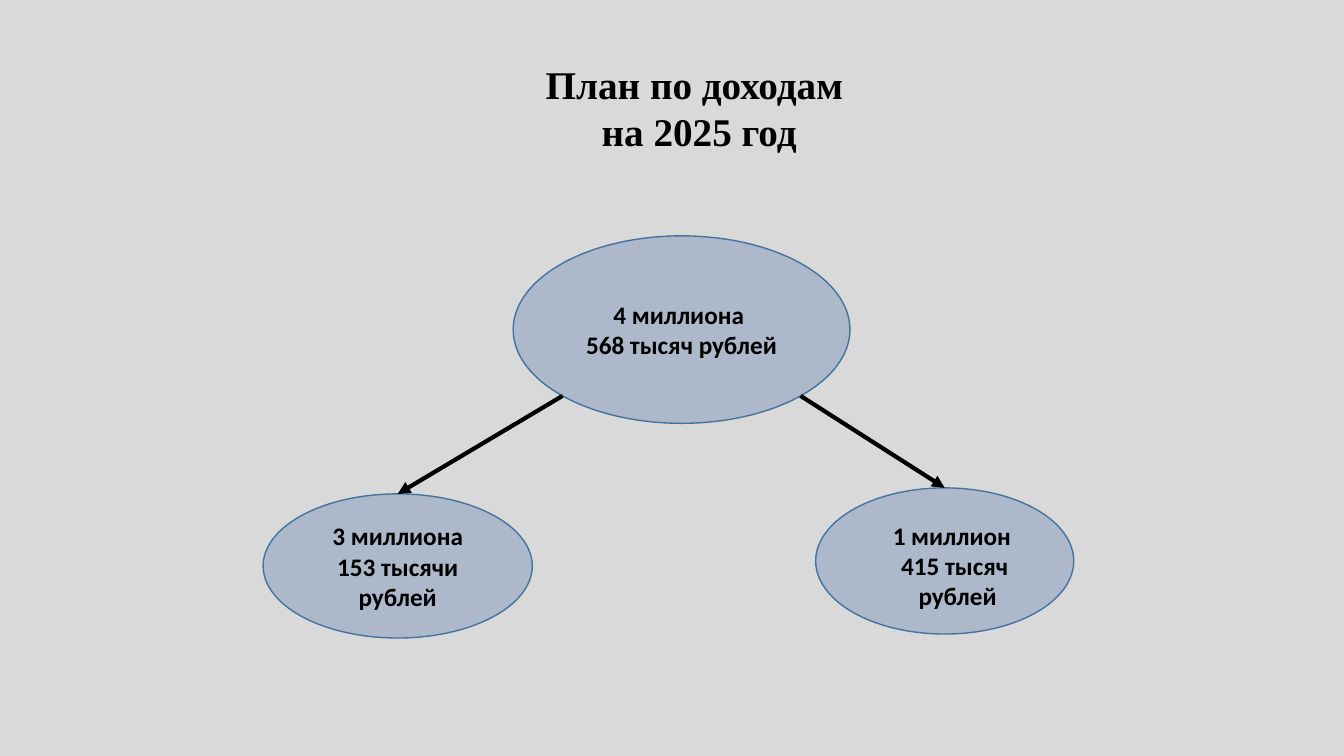
from dataclasses import dataclass
from math import sqrt

from pptx import Presentation
from pptx.dml.color import RGBColor
from pptx.enum.shapes import MSO_CONNECTOR, MSO_SHAPE
from pptx.enum.text import MSO_ANCHOR, PP_ALIGN
from pptx.oxml.ns import qn
from pptx.util import Inches, Pt
from lxml.etree import SubElement

BACKGROUND, OVAL_FILL, OVAL_LINE, BLACK = "D9D9D9", "ADB9CA", "43739E", "000000"
TITLE_FONT = {"name": "Times New Roman", "size": Pt(28), "bold": True}
LABEL_FONT = {"name": "Calibri", "size": Pt(18), "bold": True}


@dataclass
class Box:
    left: float
    top: float
    width: float
    height: float

    def lengths(self) -> list:
        return [Inches(v) for v in (self.left, self.top, self.width, self.height)]

    def lower_corner(self, side: int) -> tuple:
        reach = 1 / sqrt(2)
        return (self.left + self.width / 2 * (1 + side * reach),
                self.top + self.height / 2 * (1 + reach))


@dataclass
class Oval:
    box: Box
    lines: tuple = ()


def color(value: str) -> RGBColor:
    return RGBColor.from_string(value)


def write(tf, lines: tuple, fmt: dict) -> None:
    tf.word_wrap = True
    for i, line in enumerate(lines):
        p = tf.add_paragraph() if i else tf.paragraphs[0]
        p.text = line
        p.alignment = PP_ALIGN.CENTER
        for r in p.runs:
            for name, value in fmt.items():
                setattr(r.font, name, value)
            r.font.color.rgb = color(BLACK)


def add_text(s, box: Box, lines: tuple, fmt: dict) -> None:
    write(s.shapes.add_textbox(*box.lengths()).text_frame, lines, fmt)


def add_oval(s, oval: Oval):
    sp = s.shapes.add_shape(MSO_SHAPE.OVAL, *oval.box.lengths())
    sp.shadow.inherit = False
    sp.fill.solid()
    sp.fill.fore_color.rgb = color(OVAL_FILL)
    sp.line.color.rgb = color(OVAL_LINE)
    sp.line.width = Pt(1)
    sp.text_frame.vertical_anchor = MSO_ANCHOR.MIDDLE
    write(sp.text_frame, oval.lines, LABEL_FONT)
    return sp


def add_arrow(s, start: tuple, target) -> None:
    x, y = (Inches(v) for v in start)
    cx = s.shapes.add_connector(MSO_CONNECTOR.STRAIGHT, x, y, x, y)
    cx.end_connect(target, 0)
    cx.line.color.rgb = color(BLACK)
    cx.line.width = Pt(3)
    SubElement(cx.line._get_or_add_ln(), qn("a:tailEnd"), type="triangle")
    SubElement(cx._element.spPr, qn("a:effectLst"))


TOTAL = Oval(Box(5.09, 2.34, 3.34, 1.86), ("4 миллиона ", "568 тысяч рублей"))
PARTS = {
    1: Oval(Box(8.09, 4.84, 2.56, 1.45)),
    -1: Oval(Box(2.61, 4.9, 2.67, 1.43), ("3 миллиона 153 тысячи рублей",)),
}


def main() -> None:
    prs = Presentation()
    prs.slide_width, prs.slide_height = Inches(13.33), Inches(7.5)
    s = prs.slides.add_slide(prs.slide_layouts[6])
    s.background.fill.solid()
    s.background.fill.fore_color.rgb = color(BACKGROUND)

    add_text(s, Box(3.6, 0.55, 6.67, 1.04), ("План по доходам \vна 2025 год",), TITLE_FONT)
    add_oval(s, TOTAL)
    for side, part in PARTS.items():
        add_arrow(s, TOTAL.box.lower_corner(side), add_oval(s, part))
    add_text(s, Box(8.42, 5.11, 2.1, 1.01), ("1 миллион ", "415 тысяч", " рублей"), LABEL_FONT)

    prs.save("out.pptx")


if __name__ == "__main__":
    main()
